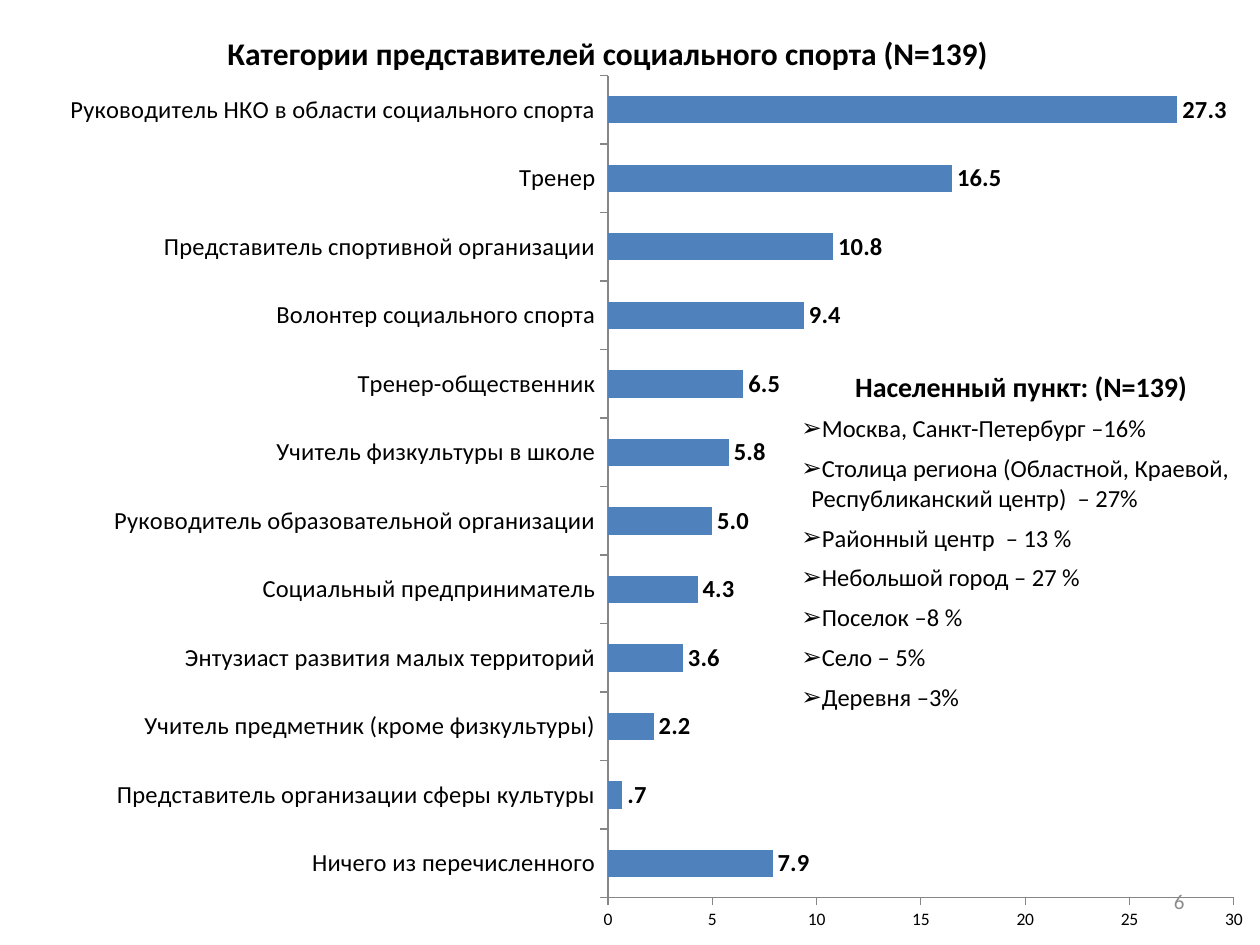
from lxml import etree
from pptx import Presentation
from pptx.chart.data import CategoryChartData
from pptx.dml.color import RGBColor
from pptx.enum.chart import XL_CHART_TYPE, XL_LABEL_POSITION, XL_TICK_MARK
from pptx.enum.text import MSO_ANCHOR, MSO_AUTO_SIZE, PP_ALIGN
from pptx.oxml import parse_xml
from pptx.oxml.ns import nsdecls, qn
from pptx.util import Inches, Pt

BAR_CLUSTERED = XL_CHART_TYPE.BAR_CLUSTERED
OUTSIDE_END = XL_LABEL_POSITION.OUTSIDE_END
TICK_OUTSIDE = XL_TICK_MARK.OUTSIDE
MIDDLE = MSO_ANCHOR.MIDDLE
NO_AUTOFIT = MSO_AUTO_SIZE.NONE
LEFT, CENTER, RIGHT = PP_ALIGN.LEFT, PP_ALIGN.CENTER, PP_ALIGN.RIGHT

FONT = "Calibri"
BLACK, BLUE, AXIS_GRAY, NUMBER_GRAY = "000000", "4F81BD", "868686", "8C8C8C"
CHART_TITLE = "Категории представителей социального спорта (N=139)"
CATEGORY_SHARES = {
    "Ничего из перечисленного": 7.9,
    "Представитель организации сферы культуры": 0.7,
    "Учитель предметник (кроме физкультуры)": 2.2,
    "Энтузиаст развития малых территорий": 3.6,
    "Социальный предприниматель": 4.3,
    "Руководитель образовательной организации": 5.0,
    "Учитель физкультуры в школе": 5.8,
    "Тренер-общественник": 6.5,
    "Волонтер социального спорта": 9.4,
    "Представитель спортивной организации": 10.8,
    "Тренер": 16.5,
    "Руководитель НКО в области социального спорта": 27.3,
}
SETTLEMENT_TITLE = "Населенный пункт: (N=139) "
SETTLEMENTS = [
    "Москва, Санкт-Петербург –16%",
    "Столица региона (Областной, Краевой, Республиканский центр)  – 27%",
    "Районный центр  – 13 %",
    "Небольшой город – 27 %",
    "Поселок –8 %",
    "Село – 5%",
    "Деревня –3%",
]


def color(value):
    """Return the colour for a hex string."""
    return RGBColor.from_string(value)


def format_font(font, size, bold=False, fill=BLACK):
    """Apply the slide's typeface with a size, weight and colour."""
    font.name = FONT
    font.size = Pt(size)
    font.bold = bold
    font.color.rgb = color(fill)


def write_text(paragraph, text, size=14, bold=False, fill=BLACK, align=LEFT):
    """Write one formatted run into a paragraph."""
    paragraph.alignment = align
    run = paragraph.add_run()
    run.text = text
    format_font(run.font, size, bold, fill)


def set_list_format(paragraph, indent, bullet=None):
    """Set the hanging indent, the spacing and the bullet of a paragraph."""
    paragraph.space_before = Pt(6)
    properties = paragraph._p.get_or_add_pPr()
    properties.set("marL", str(Inches(0.08)))
    properties.set("indent", str(Inches(indent)))
    if bullet:
        etree.SubElement(properties, qn("a:buFont")).set("typeface", "Arial")
        etree.SubElement(properties, qn("a:buChar")).set("char", bullet)
    else:
        etree.SubElement(properties, qn("a:buNone"))


def set_plot_layout(chart, left, top, width, height):
    """Fix the inner plot area as fractions of the chart."""
    plot_area = chart.element.find(".//" + qn("c:plotArea"))
    for layout in plot_area.findall(qn("c:layout")):
        plot_area.remove(layout)
    sizes = {"x": left, "y": top, "w": width, "h": height}
    values = "".join(f'<c:{name} val="{value}"/>' for name, value in sizes.items())
    plot_area.insert(0, parse_xml(
        f'<c:layout {nsdecls("c")}><c:manualLayout><c:layoutTarget val="inner"/>'
        f'<c:xMode val="edge"/><c:yMode val="edge"/>{values}'
        f'</c:manualLayout></c:layout>'))


def format_axis(axis, size):
    """Give an axis outside ticks, a gray line and no gridlines."""
    axis.has_major_gridlines = False
    axis.major_tick_mark = TICK_OUTSIDE
    axis.format.line.color.rgb = color(AXIS_GRAY)
    axis.format.line.width = Pt(0.75)
    format_font(axis.tick_labels.font, size)


def add_category_chart(slide):
    """Add the bar chart of representative categories."""
    data = CategoryChartData(number_format="0.0")
    data.categories = list(CATEGORY_SHARES)
    data.add_series("Series 1", list(CATEGORY_SHARES.values()))
    frame = slide.shapes.add_chart(
        BAR_CLUSTERED, Inches(-0.35), 0, Inches(10.35), Inches(7.5), data)
    chart = frame.chart
    format_font(chart.font, 10)
    chart.has_legend = False
    chart.has_title = True
    write_text(chart.chart_title.text_frame.paragraphs[0], CHART_TITLE,
               size=18, bold=True, align=CENTER)
    chart.chart_title.include_in_layout = False
    set_plot_layout(chart, 0.5, 0.08, 0.48, 0.87)

    format_axis(chart.category_axis, 14)
    format_axis(chart.value_axis, 10)
    chart.value_axis.minimum_scale = 0
    chart.value_axis.maximum_scale = 30
    chart.value_axis.major_unit = 5
    chart.value_axis.tick_labels.number_format = "#,##0"
    chart.value_axis.tick_labels.number_format_is_linked = False

    plot = chart.plots[0]
    plot.gap_width = 150
    plot.vary_by_categories = False
    bar_fill = plot.series[0].format.fill
    bar_fill.solid()
    bar_fill.fore_color.rgb = color(BLUE)
    labels = plot.series[0].data_labels
    labels.show_value = True
    labels.position = OUTSIDE_END
    labels.number_format = "####.0"
    labels.number_format_is_linked = False
    format_font(labels.font, 14, bold=True)
    return frame


def fill_settlement_list(body):
    """Place the body and write the settlement shares."""
    body.left, body.top = Inches(6.26), Inches(2.88)
    body.width, body.height = Inches(3.74), Inches(3.78)
    text_frame = body.text_frame
    text_frame.auto_size = NO_AUTOFIT
    heading = text_frame.paragraphs[0]
    write_text(heading, SETTLEMENT_TITLE, size=16, bold=True, align=CENTER)
    set_list_format(heading, -0.38)
    for settlement in SETTLEMENTS:
        paragraph = text_frame.add_paragraph()
        write_text(paragraph, settlement)
        set_list_format(paragraph, -0.39, bullet="➢")


def add_page_number(slide, number):
    """Add the page number at the lower right."""
    box = slide.shapes.add_textbox(
        Inches(7.17), Inches(6.95), Inches(2.33), Inches(0.4))
    box.text_frame.word_wrap = True
    box.text_frame.vertical_anchor = MIDDLE
    write_text(box.text_frame.paragraphs[0], number, size=12,
               fill=NUMBER_GRAY, align=RIGHT)


def main():
    """Build and save the slide."""
    presentation = Presentation()
    presentation.slide_width = Inches(10)
    presentation.slide_height = Inches(7.5)
    slide = presentation.slides.add_slide(presentation.slide_layouts[1])
    title = slide.shapes.title.element
    title.getparent().remove(title)
    body = slide.placeholders[1]
    chart_frame = add_category_chart(slide)
    body.element.addprevious(chart_frame.element)
    fill_settlement_list(body)
    add_page_number(slide, "6")
    presentation.save("out.pptx")


if __name__ == "__main__":
    main()
